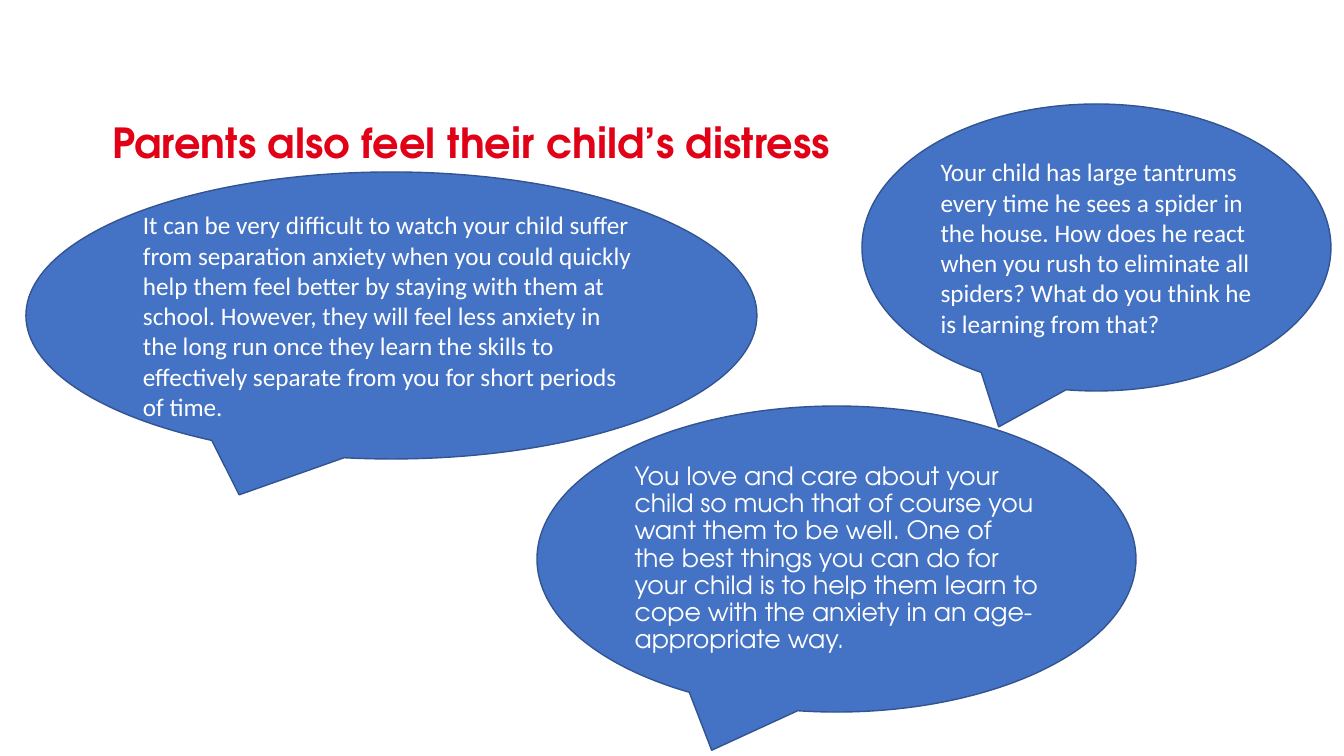
"""Build the slide on how parents feel their child's distress."""
from pptx import Presentation
from pptx import util as u
from pptx.dml.color import RGBColor
from pptx.enum import shapes, text

PX = 914400 / 100.8
COLORS = {"title": "E10016", "bubble": "4472C4", "outline": "325491", "text": "FFFFFF"}
HEADING_FONT, BODY_FONT = "TeX Gyre Adventor", "Calibri"


def px(*lengths):
    return [u.Emu(round(n * PX)) for n in lengths]


def write(tf, words, font, size, color, spacing, anchor, bold=False):
    tf.word_wrap = True
    tf.auto_size = text.MSO_AUTO_SIZE.NONE
    tf.vertical_anchor = anchor
    p = tf.paragraphs[0]
    p.alignment = text.PP_ALIGN.LEFT
    p.line_spacing = spacing
    r = p.add_run()
    r.text = words
    r.font.name = font
    r.font.size = u.Pt(size)
    r.font.bold = bold
    r.font.color.rgb = RGBColor.from_string(COLORS[color])


prs = Presentation()
prs.slide_width, prs.slide_height = px(1344, 756)
s = prs.slides.add_slide(prs.slide_layouts[5])

title = s.shapes.title
title.left, title.top, title.width, title.height = px(102, 122, 1591, 54)
write(title.text_frame, "Parents also feel their child’s distress",
      HEADING_FONT, 29.6, "title", 0.8, text.MSO_ANCHOR.TOP, bold=True)

bubbles = [
    ((537, 406, 599, 306), HEADING_FONT, 0.9,
     "You love and care about your child so much that of course you want them to be well. "
     "One of the best things you can do for your child is to help them learn to cope with "
     "the anxiety in an age-appropriate way."),
    ((26, 172, 731, 287), BODY_FONT, 1.0,
     "It can be very difficult to watch your child suffer from separation anxiety when you "
     "could quickly help them feel better by staying with them at school. However, they will "
     "feel less anxiety in the long run once they learn the skills to effectively separate "
     "from you for short periods of time."),
    ((862, 104, 469, 287), BODY_FONT, 1.0,
     "Your child has large tantrums every time he sees a spider in the house. How does he "
     "react when you rush to eliminate all spiders? What do you think he is learning from that?"),
]
for box, font, spacing, words in bubbles:
    sp = s.shapes.add_shape(shapes.MSO_SHAPE.OVAL_CALLOUT, *px(*box))
    sp.shadow.inherit = False
    sp.fill.solid()
    sp.fill.fore_color.rgb = RGBColor.from_string(COLORS["bubble"])
    sp.line.color.rgb = RGBColor.from_string(COLORS["outline"])
    sp.line.width = u.Pt(1)
    write(sp.text_frame, words, font, 18, "text", spacing, text.MSO_ANCHOR.MIDDLE)

prs.save("out.pptx")
